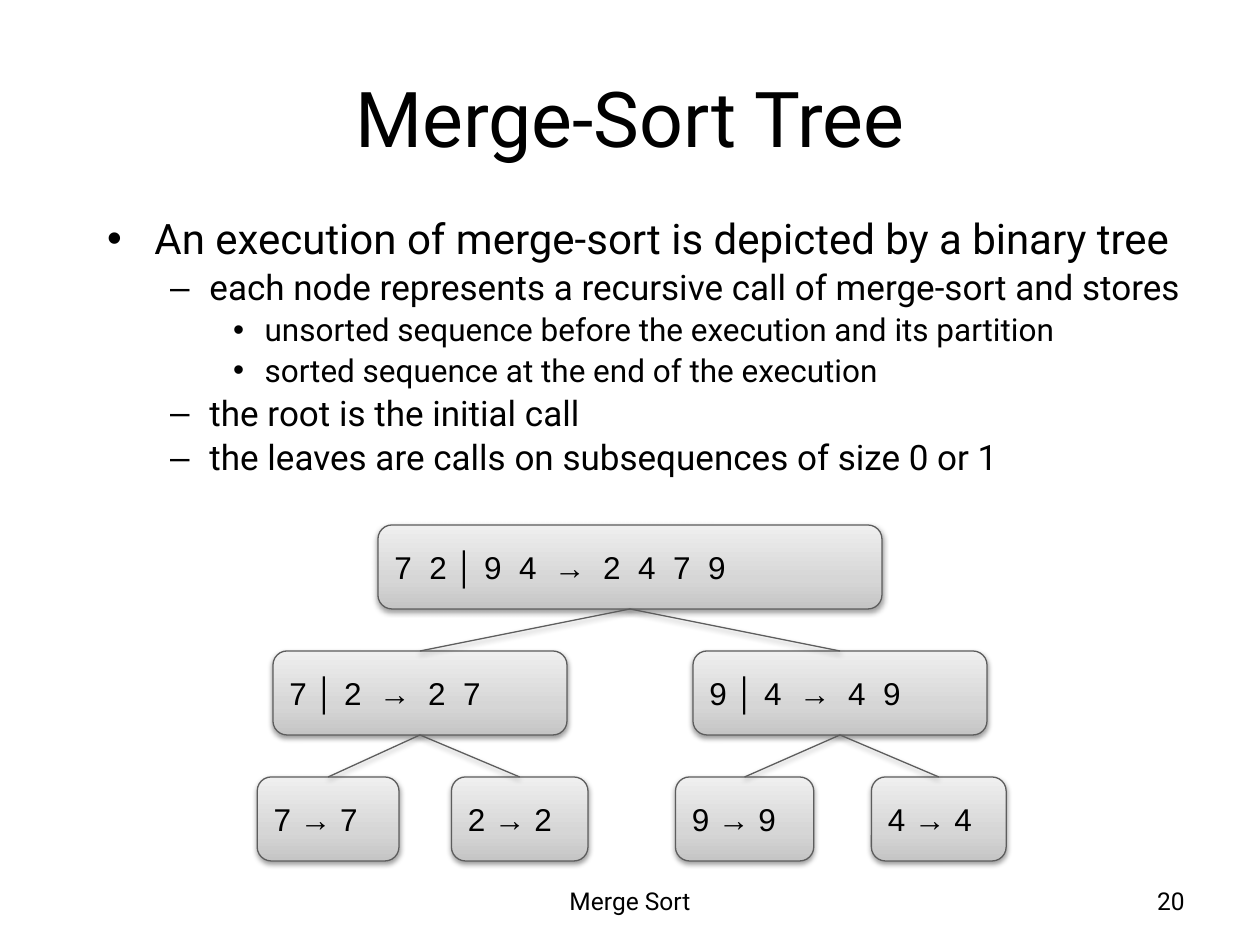
import itertools

import lxml.etree
import pptx
import pptx.dml.color
import pptx.enum.dml
import pptx.enum.shapes
import pptx.enum.text
import pptx.oxml.ns
import pptx.util

Pt = pptx.util.Pt
qn = pptx.oxml.ns.qn
ALIGN = pptx.enum.text.PP_ALIGN
ANCHOR = pptx.enum.text.MSO_ANCHOR

COLORS = {
    "text": "000000",
    "outline": "5D5D5D",
    "shadow": "000000",
    "dark": "C5C5C5",
    "middle": "D6D6D6",
    "light": "EFEFEF",
}
GRADIENT = [(0, "dark"), (35, "middle"), (100, "light")]

BULLETS = [
    (0, "An execution of merge-sort is depicted by a binary tree"),
    (1, "each node represents a recursive call of merge-sort and stores"),
    (2, "unsorted sequence before the execution and its partition"),
    (2, "sorted sequence at the end of the execution"),
    (1, "the root is the initial call"),
    (1, "the leaves are calls on subsequences of size 0 or 1"),
]
LEVELS = [
    {"char": "•", "margin": 27, "hanging": 27, "size": 24},
    {"char": "–", "margin": 58.5, "hanging": 22.5, "size": 20},
    {"char": "•", "margin": 90, "hanging": 18, "size": 18},
]

NODE_HEIGHT = 48
ROW_STEP = 72
TREE = (69, 288, "7  2 │ 9  4  →  2  4  7  9", [
    (9, 168, "7 │ 2  →  2  7", [(0, 81, "7 → 7", []), (111, 78, "2 → 2", [])]),
    (249, 168, "9 │ 4  →  4  9", [(239, 79, "9 → 9", []), (351, 77, "4 → 4", [])]),
])


def rgb(name):
    return pptx.dml.color.RGBColor.from_string(COLORS[name])


def apply_format(target, values):
    for name, value in values.items():
        setattr(target, name, value)


def place(shape, box):
    names = ("left", "top", "width", "height")
    apply_format(shape, dict(zip(names, map(Pt, box))))


def format_font(font, size, name="Roboto", bold=False):
    apply_format(font, {"size": Pt(size), "name": name, "bold": bold})
    font.color.rgb = rgb("text")


def add_outline_and_shadow(shape):
    shape.line.color.rgb = rgb("outline")
    shape.line.width = Pt(0.75)
    properties = shape._element.spPr
    effects = lxml.etree.SubElement(properties, qn("a:effectLst"))
    shadow = lxml.etree.SubElement(effects, qn("a:outerShdw"), {
        "blurRad": str(Pt(3.1)), "dist": str(Pt(1.6)),
        "dir": "5400000", "rotWithShape": "0"})
    color = lxml.etree.SubElement(shadow, qn("a:srgbClr"), val=COLORS["shadow"])
    lxml.etree.SubElement(color, qn("a:alpha"), val="38000")


def fill_gradient(shape):
    shape.fill.gradient()
    shape.fill.gradient_angle = 90
    stops = shape._element.spPr.find(qn("a:gradFill")).find(qn("a:gsLst"))
    for stop in list(stops):
        stops.remove(stop)
    for position, name in GRADIENT:
        stop = lxml.etree.SubElement(stops, qn("a:gs"), pos=str(position * 1000))
        lxml.etree.SubElement(stop, qn("a:srgbClr"), val=COLORS[name])


def add_title(slide, box):
    title = slide.shapes.title
    place(title, box)
    frame = title.text_frame
    frame.text = "Merge-Sort Tree"
    apply_format(frame, {"vertical_anchor": ANCHOR.MIDDLE,
                         "auto_size": pptx.enum.text.MSO_AUTO_SIZE.NONE})
    frame.paragraphs[0].alignment = ALIGN.CENTER
    format_font(frame.paragraphs[0].runs[0].font, 44)


def add_bullets(slide, box):
    body = slide.placeholders[1]
    place(body, box)
    frame = body.text_frame
    frame.auto_size = pptx.enum.text.MSO_AUTO_SIZE.NONE
    for index, (level, text) in enumerate(BULLETS):
        paragraph = frame.add_paragraph() if index else frame.paragraphs[0]
        style = LEVELS[level]
        apply_format(paragraph, {"level": level, "line_spacing": 0.9})
        if index == 0:
            paragraph.space_before = Pt(0)
        properties = paragraph._p.get_or_add_pPr()
        properties.set("marL", str(Pt(style["margin"])))
        properties.set("indent", str(-Pt(style["hanging"])))
        lxml.etree.SubElement(properties, qn("a:buChar"), char=style["char"])
        run = paragraph.add_run()
        run.text = text
        format_font(run.font, style["size"])


def add_node(slide, box, text):
    node = slide.shapes.add_shape(
        pptx.enum.shapes.MSO_SHAPE.ROUNDED_RECTANGLE, *map(Pt, box))
    node.adjustments[0] = 0.167
    fill_gradient(node)
    add_outline_and_shadow(node)
    frame = node.text_frame
    apply_format(frame, {"word_wrap": False, "vertical_anchor": ANCHOR.MIDDLE})
    paragraph = frame.paragraphs[0]
    paragraph.alignment = ALIGN.LEFT
    for is_symbol, characters in itertools.groupby(text, lambda c: c in "│→"):
        run = paragraph.add_run()
        run.text = "".join(characters)
        format_font(run.font, 18, "Arial", is_symbol)
    return node


def add_tree(slide, left, top, tree):
    offset, width, text, children = tree
    node = add_node(slide, (left + offset, top, width, NODE_HEIGHT), text)
    for child in children:
        child_node = add_tree(slide, left, top + ROW_STEP, child)
        branch = slide.shapes.add_connector(
            pptx.enum.shapes.MSO_CONNECTOR.STRAIGHT, 0, 0, 0, 0)
        branch.begin_connect(node, 2)
        branch.end_connect(child_node, 0)
        add_outline_and_shadow(branch)
    return node


def add_footer(slide, box, text, alignment):
    footer = slide.shapes.add_textbox(*map(Pt, box))
    frame = footer.text_frame
    apply_format(frame, {"word_wrap": True, "vertical_anchor": ANCHOR.MIDDLE})
    paragraph = frame.paragraphs[0]
    paragraph.alignment = alignment
    run = paragraph.add_run()
    run.text = text
    format_font(run.font, 14)


def main():
    presentation = pptx.Presentation()
    apply_format(presentation, {"slide_width": Pt(720), "slide_height": Pt(540)})
    slide = presentation.slides.add_slide(presentation.slide_layouts[1])
    add_title(slide, (36, 21.6, 648, 90))
    add_bullets(slide, (54, 121, 636, 173.5))
    add_footer(slide, (246, 500.5, 228, 28.8), "Merge Sort", ALIGN.CENTER)
    add_footer(slide, (516, 500.5, 168, 28.8), "20", ALIGN.RIGHT)
    add_tree(slide, 147, 300, TREE)
    presentation.save("out.pptx")


if __name__ == "__main__":
    main()
